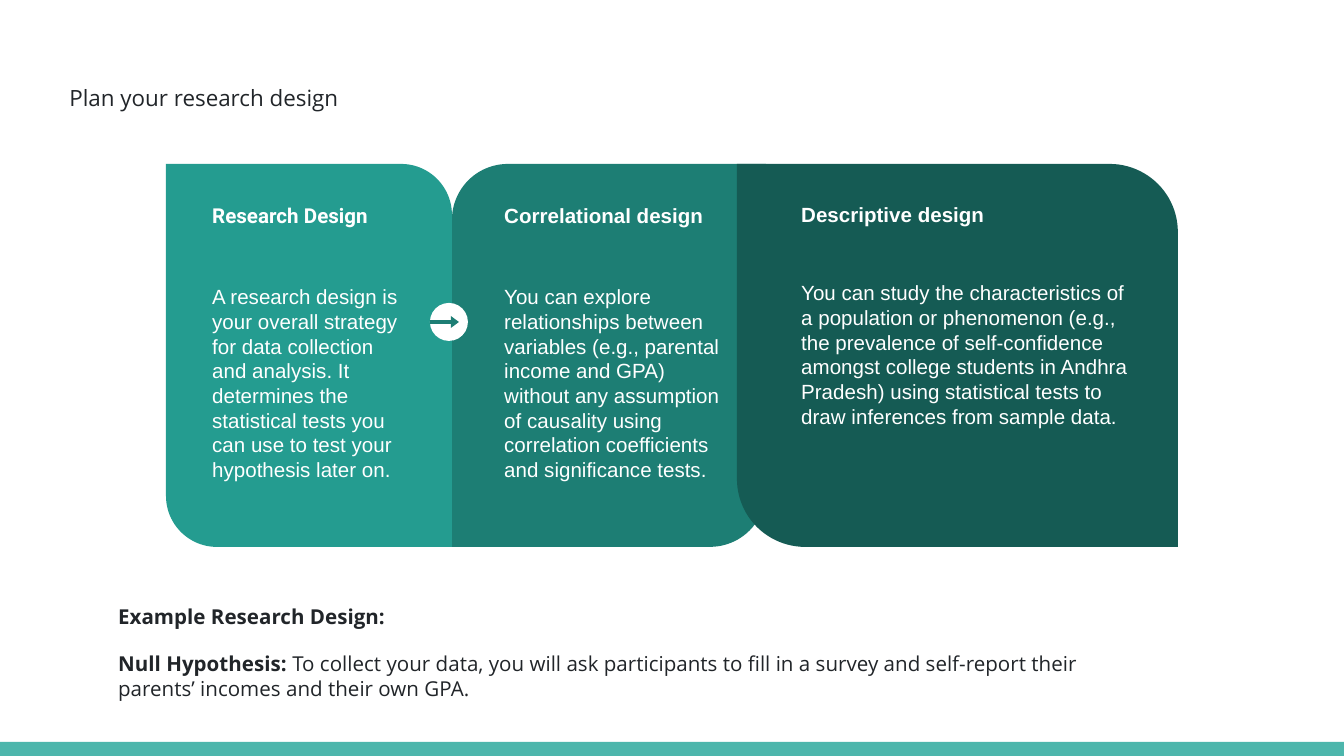
from dataclasses import dataclass

from pptx import Presentation
from pptx import util as u
from pptx.dml.color import RGBColor
from pptx.enum import shapes, text

PX = 914400 / 134.4  # EMU in one px


@dataclass(frozen=True)
class Theme:
    ink: str = "212529"
    white: str = "FFFFFF"
    bar: str = "4DB6AC"
    light: str = "249C90"
    mid: str = "1D7E74"
    dark: str = "155B54"
    sans: str = "Arial"
    heading: str = "Roboto"
    reading: str = "Open Sans"
    title_size: int = 12
    body_size: int = 11
    inset: float = 13.44


THEME = Theme()
WIDTH, HEIGHT = 1344, 756

# Back to front: box, fill, corner adjustments, text offset and width, text tops, heading font, words
PANELS = [
    dict(box=(452, 164, 314, 383), fill=THEME.mid, corners=(0.178, 0),
         indent=39, text_width=257, tops=(26, 107), font=THEME.sans,
         heading="Correlational design",
         body="You can explore relationships between variables (e.g., parental income and GPA) "
              "without any assumption of causality using correlation coefficients and "
              "significance tests."),
    dict(box=(166, 164, 286, 383), fill=THEME.light, corners=(0, 0.178),
         indent=33, text_width=214, tops=(26, 107), font=THEME.heading,
         heading="Research Design",
         body="A research design is your overall strategy for data collection and analysis. "
              "It determines the statistical tests you can use to test your hypothesis later on."),
    dict(box=(737, 164, 441, 383), fill=THEME.dark, corners=(0, 0.178),
         indent=51, text_width=355, tops=(25, 103), font=THEME.sans,
         heading="Descriptive design",
         body="You can study the characteristics of a population or phenomenon (e.g., the "
              "prevalence of self-confidence amongst college students in Andhra Pradesh) using "
              "statistical tests to draw inferences from sample data."),
]


def px(*lengths):
    return [u.Emu(round(length * PX)) for length in lengths]


def add_span(para, words, font=THEME.sans, size=THEME.body_size, color=THEME.white, bold=False):
    span = para.add_run()
    span.text = words
    span.font.name = font
    span.font.size = u.Pt(size)
    span.font.bold = bold
    span.font.color.rgb = RGBColor.from_string(color)


def format_frame(frame):
    frame.word_wrap = True
    frame.auto_size = text.MSO_AUTO_SIZE.NONE
    frame.vertical_anchor = text.MSO_ANCHOR.TOP
    inset, = px(THEME.inset)
    frame.margin_left = frame.margin_right = inset
    frame.margin_top = frame.margin_bottom = inset
    return frame


def add_text(parent, box, words="", **style):
    frame = format_frame(parent.add_textbox(*px(*box)).text_frame)
    if words:
        add_span(frame.paragraphs[0], words, **style)
    return frame


def add_block(parent, kind, box, fill, adjustments=()):
    block = parent.add_shape(kind, *px(*box))
    block.shadow.inherit = False
    block.fill.solid()
    block.fill.fore_color.rgb = RGBColor.from_string(fill)
    block.line.fill.background()
    for index, value in enumerate(adjustments):
        block.adjustments[index] = value
    return block


def place_title(slide, box, words):
    title = slide.shapes.title
    title.left, title.top, title.width, title.height = px(*box)
    para = format_frame(title.text_frame).paragraphs[0]
    para.alignment = text.PP_ALIGN.LEFT
    para.line_spacing = 1.15
    add_span(para, words, font=THEME.reading, size=THEME.title_size, color=THEME.ink)


def add_panel(slide, box, fill, corners, indent, text_width, tops, font, heading, body):
    left, top, _, height = box
    group = slide.shapes.add_group_shape().shapes
    add_block(group, shapes.MSO_SHAPE.ROUND_2_DIAG_RECTANGLE, box, fill, corners)
    heading_top, body_top = tops
    add_text(group, (left + indent, top + heading_top, text_width, body_top - heading_top),
             heading, font=font, bold=True)
    add_text(group, (left + indent, top + body_top, text_width, height - body_top), body)


def add_arrow_badge(slide, box):
    left, top, width, height = box
    group = slide.shapes.add_group_shape().shapes
    add_block(group, shapes.MSO_SHAPE.OVAL, box, THEME.white)
    arrow_height = 12
    add_block(group, shapes.MSO_SHAPE.RIGHT_ARROW,
              (left, top + (height - arrow_height) / 2, width - 9, arrow_height),
              THEME.mid, (0.32, 0.67))


def add_example(slide, box):
    frame = add_text(slide.shapes, box)
    style = dict(font=THEME.reading, color=THEME.ink)
    add_span(frame.paragraphs[0], "Example Research Design:", bold=True, **style)
    para = frame.add_paragraph()
    para.space_before = para.space_after = u.Pt(12)
    add_span(para, "Null Hypothesis:", bold=True, **style)
    add_span(para, " To collect your data, you will ask participants to fill in a survey and "
                   "self-report their parents’ incomes and their own GPA.", **style)


def main():
    deck = Presentation()
    deck.slide_width, deck.slide_height = px(WIDTH, HEIGHT)
    slide = deck.slides.add_slide(deck.slide_layouts[5])

    # Footer bar and title
    add_block(slide.shapes, shapes.MSO_SHAPE.RECTANGLE, (0, 742, WIDTH, 14), THEME.bar)
    place_title(slide, (56, 67, 1017, 54), "Plan your research design")

    # Design panels, joined by the arrow badge
    for panel in PANELS:
        add_panel(slide, **panel)
    add_arrow_badge(slide, (430, 303, 38, 38))

    # Worked example
    add_example(slide, (105, 591, 1024, 125))
    deck.save("out.pptx")


if __name__ == "__main__":
    main()
